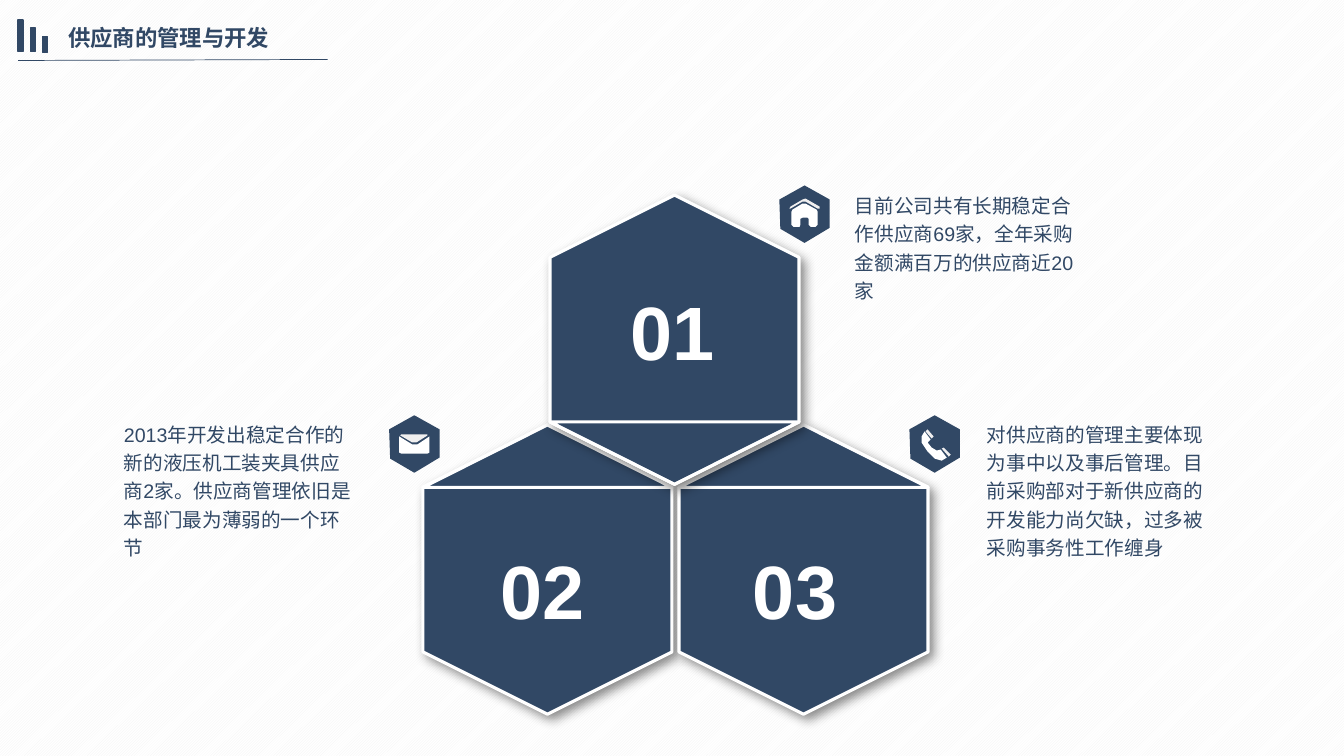
from lxml import etree
from pptx import Presentation
from pptx.dml.color import RGBColor
from pptx.enum.dml import MSO_PATTERN
from pptx.enum.shapes import MSO_CONNECTOR, MSO_SHAPE
from pptx.enum.text import MSO_AUTO_SIZE, PP_ALIGN
from pptx.oxml.ns import qn
from pptx.util import Inches, Pt

HEXAGON = MSO_SHAPE.HEXAGON
RECTANGLE = MSO_SHAPE.RECTANGLE
STRAIGHT = MSO_CONNECTOR.STRAIGHT
DIAGONAL = MSO_PATTERN.DARK_UPWARD_DIAGONAL
GROW = MSO_AUTO_SIZE.SHAPE_TO_FIT_TEXT
JUSTIFY = PP_ALIGN.JUSTIFY

COLORS = {"navy": "314865", "white": "FFFFFF", "pale": "F0EFEF",
          "stripe": "F2F2F2", "black": "000000"}
FONT = "Arial"
HEX_WIDTH, HEX_HEIGHT, HEX_POINT = 2.47, 2.87, 0.62
NOTE_WIDTH = 2.49

BADGE = [(0, 0.14), (0.25, 0), (0.5, 0.14), (0.5, 0.42), (0.25, 0.57), (0.01, 0.43)]
HOUSE = [
    ("white", [(0.26, 0.18), (0.23, 0.18), (0.13, 0.24), (0.12, 0.26), (0.12, 0.39),
               (0.14, 0.41), (0.2, 0.41), (0.21, 0.39), (0.21, 0.33), (0.23, 0.32),
               (0.28, 0.32), (0.29, 0.33), (0.29, 0.39), (0.31, 0.41), (0.36, 0.41),
               (0.38, 0.39), (0.38, 0.26), (0.37, 0.24)]),
    ("pale", [(0.4, 0.23), (0.38, 0.23), (0.26, 0.16), (0.23, 0.16), (0.11, 0.23),
              (0.1, 0.23), (0.11, 0.21), (0.23, 0.14), (0.26, 0.13), (0.4, 0.21)]),
]
PHONE = [
    ("white", [(0.31, 0.34), (0.27, 0.35), (0.22, 0.32), (0.18, 0.27), (0.21, 0.24),
               (0.15, 0.16), (0.12, 0.21), (0.12, 0.27), (0.18, 0.36), (0.25, 0.43),
               (0.32, 0.45), (0.37, 0.42)]),
    ("pale", [(0.41, 0.39), (0.39, 0.41), (0.32, 0.33), (0.34, 0.32)]),
    ("pale", [(0.24, 0.21), (0.22, 0.23), (0.16, 0.16), (0.18, 0.14)]),
]
ENVELOPE = [
    ("pale", [(0.27, 0.27), (0.38, 0.2), (0.38, 0.19), (0.12, 0.19), (0.11, 0.2),
              (0.23, 0.27)]),
    ("white", [(0.28, 0.29), (0.23, 0.29), (0.1, 0.21), (0.1, 0.37), (0.12, 0.38),
               (0.38, 0.38), (0.4, 0.37), (0.4, 0.21)]),
]
ICONS = [(7.73, 1.84, HOUSE), (9.02, 4.12, PHONE), (3.86, 4.12, ENVELOPE)]
HEXAGONS = [(5.43, 5.65, True), (7.97, 5.65, True), (6.69, 3.37, False)]
NUMBERS = [("01", 6.16, 2.78), ("02", 4.87, 5.35), ("03", 7.37, 5.35)]
NOTES = [
    (9.69, 4.1, 1.51, "对供应商的管理主要体现为事中以及事后管理。目前采购部对于新供应商的开发能力尚欠缺，过多被采购事务性工作缠身"),
    (1.13, 4.1, 1.23, "2013年开发出稳定合作的新的液压机工装夹具供应商2家。供应商管理依旧是本部门最为薄弱的一个环节"),
    (8.38, 1.83, 0.95, "目前公司共有长期稳定合作供应商69家，全年采购金额满百万的供应商近20家"),
]
BARS = [(0.18, 0.2, 0.31), (0.3, 0.28, 0.23), (0.42, 0.36, 0.16)]


class SlideBuilder:
    """Draws styled elements on the current slide."""

    def __init__(self, slide):
        self.slide = slide

    def color(self, name):
        return RGBColor.from_string(COLORS[name])

    def background(self):
        fill = self.slide.background.fill
        fill.patterned()
        fill.pattern = DIAGONAL
        fill.fore_color.rgb = self.color("stripe")
        fill.back_color.rgb = self.color("white")

    def paint(self, shape, fill, line=None, width=0):
        shape.shadow.inherit = False
        shape.fill.solid()
        shape.fill.fore_color.rgb = self.color(fill)
        if line:
            shape.line.color.rgb = self.color(line)
            shape.line.width = Pt(width)
        else:
            shape.line.fill.background()
        return shape

    def preset(self, kind, left, top, width, height, fill, line, line_width):
        shape = self.slide.shapes.add_shape(
            kind, Inches(left), Inches(top), Inches(width), Inches(height))
        return self.paint(shape, fill, line, line_width)

    def outline(self, points, fill, line=None, width=0):
        corners = [(Inches(x), Inches(y)) for x, y in points]
        builder = self.slide.shapes.build_freeform(*corners[0])
        builder.add_line_segments(corners[1:], close=True)
        return self.paint(builder.convert_to_shape(), fill, line, width)

    def icon(self, left, top, glyph):
        for fill, points in [("navy", BADGE)] + glyph:
            self.outline([(left + x, top + y) for x, y in points], fill)

    def cast_shadow(self, shape):
        effects = shape._element.spPr.find(qn("a:effectLst"))
        shadow = etree.SubElement(effects, qn("a:outerShdw"), blurRad=str(Pt(8)),
                                  dist=str(Pt(4)), dir="2700000", algn="tl",
                                  rotWithShape="0")
        color = etree.SubElement(shadow, qn("a:srgbClr"), val=COLORS["black"])
        etree.SubElement(color, qn("a:alpha"), val="45000")

    def hexagon(self, center_x, center_y, flap_on_top):
        shape = self.preset(HEXAGON, center_x - HEX_HEIGHT / 2, center_y - HEX_WIDTH / 2,
                            HEX_HEIGHT, HEX_WIDTH, "navy", "white", 2.25)
        shape.rotation = 270
        self.cast_shadow(shape)
        direction = -1 if flap_on_top else 1
        tip = center_y + direction * HEX_HEIGHT / 2
        base = tip - direction * HEX_POINT
        flap = self.outline([(center_x, tip), (center_x + HEX_WIDTH / 2, base),
                             (center_x - HEX_WIDTH / 2, base)], "navy", "white", 2.25)
        color = flap._element.spPr.find(qn("a:solidFill")).find(qn("a:srgbClr"))
        etree.SubElement(color, qn("a:alpha"), val="50000")

    def text(self, words, left, top, width, height, size, color="navy", bold=False,
             wrap=True, spacing=None, align=None):
        box = self.slide.shapes.add_textbox(
            Inches(left), Inches(top), Inches(width), Inches(height))
        frame = box.text_frame
        frame.word_wrap = wrap
        frame.auto_size = GROW
        paragraph = frame.paragraphs[0]
        paragraph.line_spacing = spacing
        paragraph.alignment = align
        run = paragraph.add_run()
        run.text = words
        run.font.name = FONT
        run.font.size = Pt(size)
        run.font.bold = bold
        run.font.color.rgb = self.color(color)

    def rule(self, start_x, start_y, end_x, end_y, width):
        connector = self.slide.shapes.add_connector(
            STRAIGHT, Inches(start_x), Inches(start_y), Inches(end_x), Inches(end_y))
        connector.line.color.rgb = self.color("navy")
        connector.line.width = Pt(width)
        etree.SubElement(connector._element.spPr, qn("a:effectLst"))


def main():
    presentation = Presentation()
    presentation.slide_width = Inches(13.33)
    presentation.slide_height = Inches(7.5)
    builder = SlideBuilder(presentation.slides.add_slide(presentation.slide_layouts[6]))
    builder.background()
    for left, top, glyph in ICONS:
        builder.icon(left, top, glyph)
    for center_x, center_y, flap_on_top in HEXAGONS:
        builder.hexagon(center_x, center_y, flap_on_top)
    for number, left, top in NUMBERS:
        builder.text(number, left, top, 1.04, 1.01, 54, "white", bold=True, wrap=False)
    for left, top, height, words in NOTES:
        builder.text(words, left, top, NOTE_WIDTH, height, 14, spacing=1.2)
    builder.rule(0.18, 0.6, 3.25, 0.59, 0.5)
    builder.text("供应商的管理与开发", 0.58, 0.19, 2.66, 0.37, 16, bold=True, align=JUSTIFY)
    for left, top, height in BARS:
        builder.preset(RECTANGLE, left, top, 0.05, height, "navy", "navy", 1)
    presentation.save("out.pptx")


if __name__ == "__main__":
    main()
